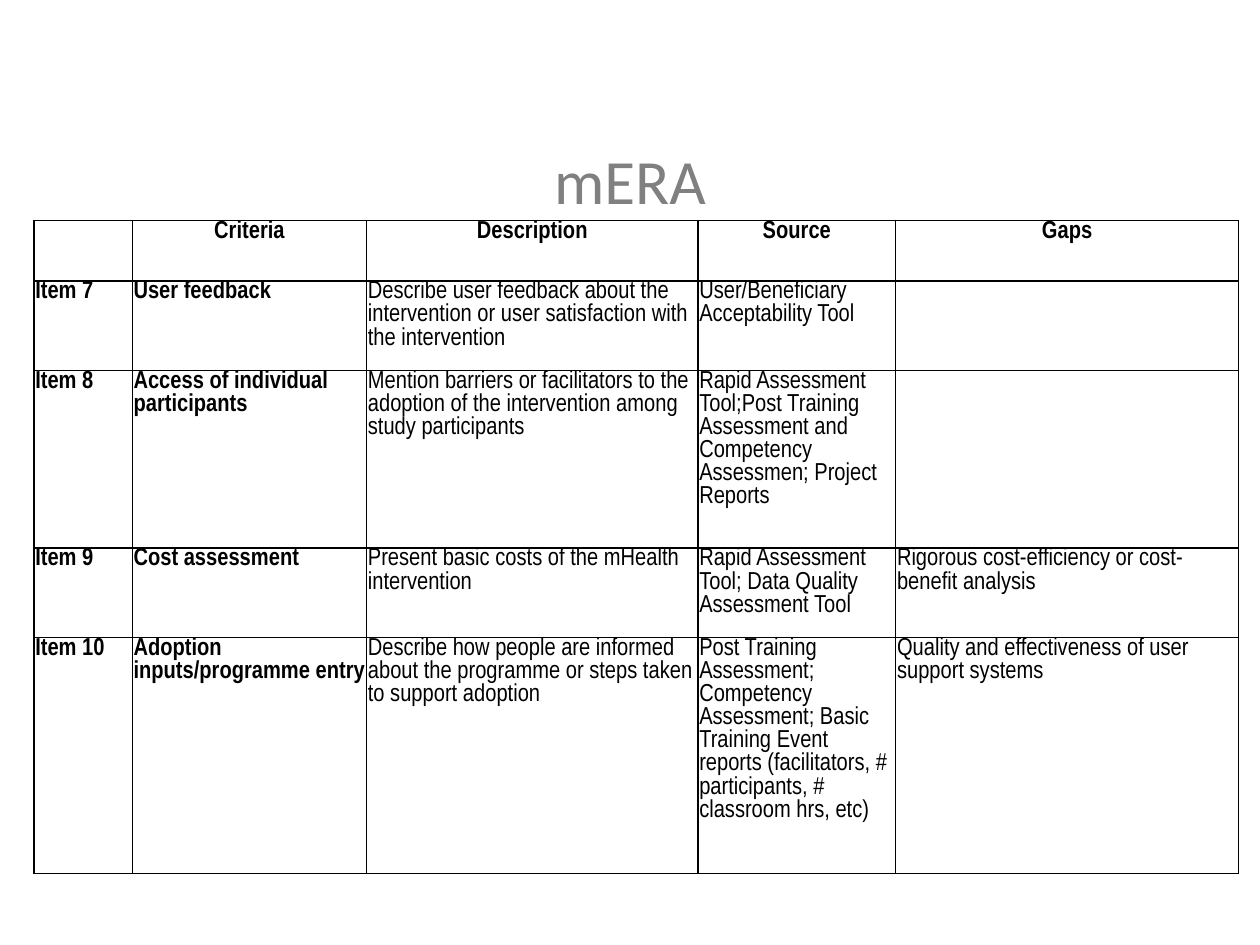
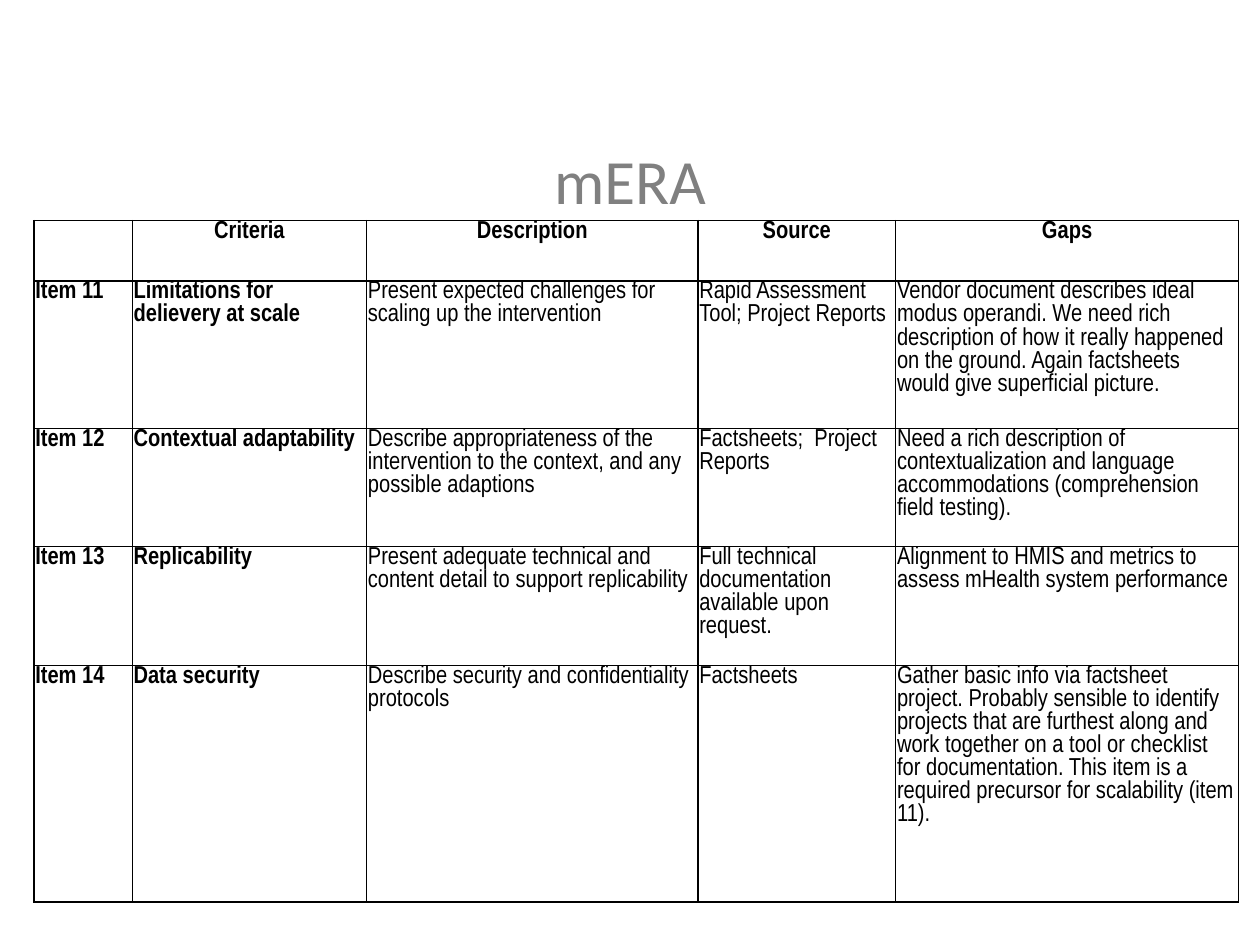
import pptx
import pptx.util
import pptx.dml.color
import pptx.enum.text
import pptx.oxml
import pptx.oxml.ns

Inches = pptx.util.Inches
Pt = pptx.util.Pt
ALIGN = pptx.enum.text.PP_ALIGN

COLORS = {"background": "FFFFFF", "title": "808080", "text": "000000", "border": "000000"}
HEADERS = ["", "Criteria", "Description", "Source", "Gaps"]
COL_WIDTHS = [0.78, 1.86, 2.63, 1.57, 2.72]
HEADER_HEIGHT = 0.48
BOLD_COLS = 2

SLIDES = [
    [
        (0.71, ["Item 7", "User feedback",
                "Describe user feedback about the intervention or user satisfaction with the intervention",
                "User/Beneficiary Acceptability Tool", ""]),
        (1.41, ["Item 8", "Access of individual participants",
                "Mention barriers or facilitators to the adoption of the intervention among study participants",
                "Rapid Assessment Tool;Post Training Assessment and Competency Assessmen; Project Reports", ""]),
        (0.71, ["Item 9", "Cost assessment",
                "Present basic costs of the mHealth intervention",
                "Rapid Assessment Tool; Data Quality Assessment Tool",
                "Rigorous cost-efficiency or cost-benefit analysis"]),
        (1.87, ["Item 10", "Adoption inputs/programme entry",
                "Describe how people are informed about the programme or steps taken to support adoption",
                "Post Training Assessment; Competency Assessment; Basic Training Event reports "
                "(facilitators, # participants, # classroom hrs, etc)",
                "Quality and effectiveness of user support systems"]),
    ],
    [
        (1.17, ["Item 11", "Limitations for delievery at scale",
                "Present expected challenges for scaling up the intervention",
                "Rapid Assessment Tool; Project Reports",
                "Vendor document describes ideal modus operandi. We need rich description of how it "
                "really happened on the ground. Again factsheets would give superficial picture."]),
        (0.94, ["Item 12", "Contextual adaptability",
                "Describe appropriateness of the intervention to the context, and any possible adaptions",
                "Factsheets;  Project Reports",
                "Need a rich description of contextualization and language accommodations "
                "(comprehension field testing)."]),
        (0.94, ["Item 13", "Replicability",
                "Present adequate technical and content detail to support replicability",
                "Full technical documentation available upon request.",
                "Alignment to HMIS and metrics to assess mHealth system performance"]),
        (1.88, ["Item 14", "Data security",
                "Describe security and confidentiality protocols",
                "Factsheets",
                "Gather basic info via factsheet project. Probably sensible to identify projects that are "
                "furthest along and work together on a tool or checklist for documentation. "
                "This item is a required precursor for scalability (item 11)."]),
    ],
]


class Deck:
    def __init__(self):
        self.prs = pptx.Presentation()
        self.prs.slide_width = Inches(10)
        self.prs.slide_height = Inches(7.5)
        self.s = None

    def color(self, name):
        return pptx.dml.color.RGBColor.from_string(COLORS[name])

    def add_slide(self):
        self.s = self.prs.slides.add_slide(self.prs.slide_layouts[5])
        fill = self.s.background.fill
        fill.solid()
        fill.fore_color.rgb = self.color("background")

    def add_run(self, p, text, font, size, color, bold=False):
        r = p.add_run()
        r.text = text
        r.font.name = font
        r.font.size = Pt(size)
        r.font.bold = bold
        r.font.color.rgb = self.color(color)

    def add_title(self, text):
        sp = self.s.shapes.title
        sp.left, sp.top, sp.width, sp.height = Inches(0), Inches(1.01), Inches(10), Inches(0.82)
        tf = sp.text_frame
        tf.vertical_anchor = pptx.enum.text.MSO_ANCHOR.MIDDLE
        p = tf.paragraphs[0]
        p.alignment = ALIGN.CENTER
        self.add_run(p, text, "Calibri", 36, "title")

    def add_borders(self, cell):
        tc_pr = cell._tc.get_or_add_tcPr()
        for side in ("lnL", "lnR", "lnT", "lnB"):
            tc_pr.append(pptx.oxml.parse_xml(
                f'<a:{side} {pptx.oxml.ns.nsdecls("a")} w="{Pt(0.75)}"><a:solidFill>'
                f'<a:srgbClr val="{COLORS["border"]}"/></a:solidFill></a:{side}>'))

    def fill_cell(self, cell, text, bold, align):
        self.add_borders(cell)
        cell.fill.background()
        cell.margin_left = cell.margin_right = Inches(0.01)
        cell.margin_top = cell.margin_bottom = Inches(0)
        if text:
            p = cell.text_frame.paragraphs[0]
            p.alignment = align
            self.add_run(p, text, "Arial Narrow", 14, "text", bold)

    def add_criteria_table(self, items):
        rows = [(HEADER_HEIGHT, HEADERS)] + items
        height = sum(h for h, _ in rows)
        table = self.s.shapes.add_table(
            len(rows), len(COL_WIDTHS), Inches(0.27), Inches(1.75),
            Inches(sum(COL_WIDTHS)), Inches(height)).table
        table.horz_banding = False
        for col, width in zip(table.columns, COL_WIDTHS):
            col.width = Inches(width)
        for i, (row_height, texts) in enumerate(rows):
            table.rows[i].height = Inches(row_height)
            align = ALIGN.CENTER if i == 0 else ALIGN.LEFT
            for j, text in enumerate(texts):
                self.fill_cell(table.cell(i, j), text, i == 0 or j < BOLD_COLS, align)


def main():
    deck = Deck()
    for items in SLIDES:
        deck.add_slide()
        deck.add_title("mERA")
        deck.add_criteria_table(items)
    deck.prs.save("out.pptx")


if __name__ == "__main__":
    main()
